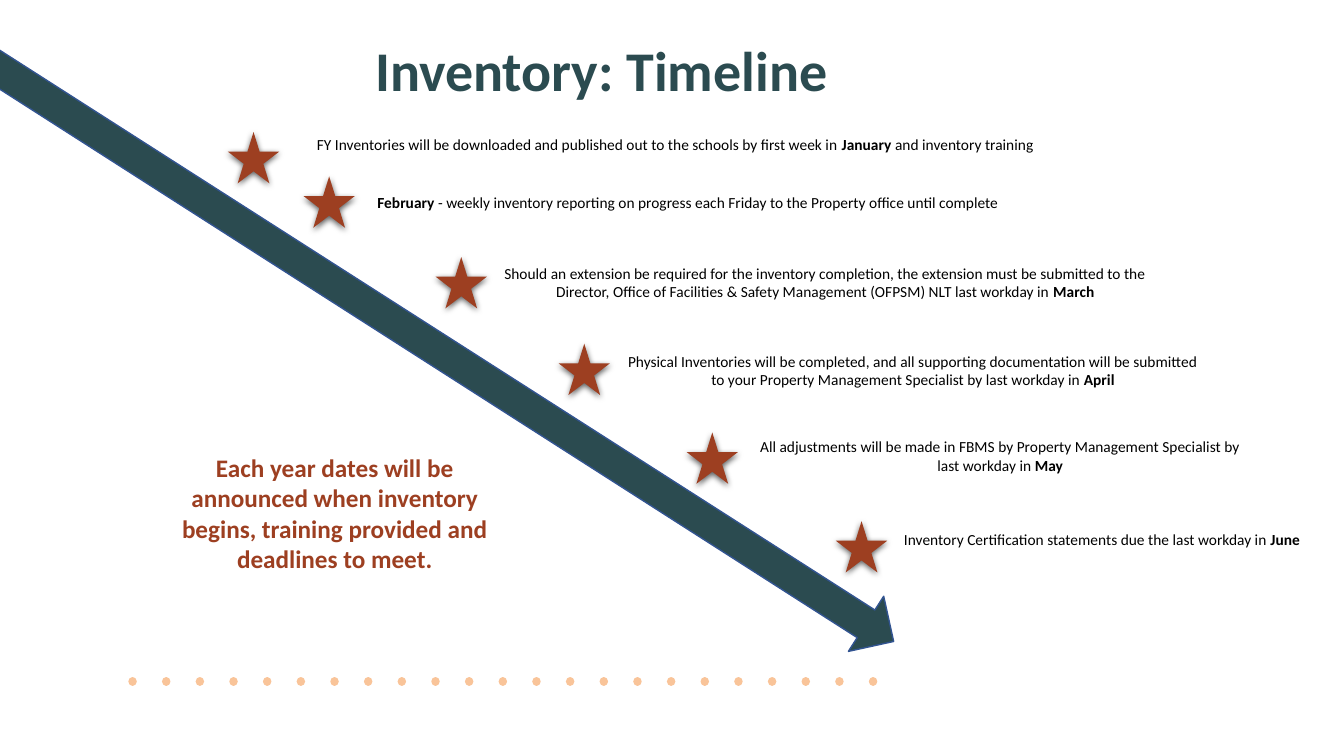
from lxml import etree
from pptx import Presentation
from pptx import util as u
from pptx.dml.color import RGBColor
from pptx.enum import dml, shapes, text
from pptx.oxml import ns

COLORS = {"teal": "2B4B50", "rust": "9D3F21", "edge": "325491",
          "peach": "F9C499", "black": "000000"}
STAR = 0.51
CENTER, LEFT = text.PP_ALIGN.CENTER, text.PP_ALIGN.LEFT

# Each milestone: star position, text box, alignment, runs as (text, bold)
MILESTONES = [
    ((2.26, 1.31), (3.01, 1.29, 7.93, 0.29), LEFT,
     [(" FY Inventories will be downloaded and published out to the schools "
       "by first week in ", False),
      ("January", True), (" and inventory training", False)]),
    ((3.01, 1.75), (3.61, 1.87, 7.33, 0.29), LEFT,
     [(" ", False), ("February", True),
      (" - weekly inventory reporting on progress each Friday to the "
       "Property office until complete", False)]),
    ((4.32, 2.55), (4.83, 2.57, 6.71, 0.47), CENTER,
     [("Should an extension be required for the inventory completion, the "
       "extension must be submitted to the Director, Office of Facilities & "
       "Safety Management (OFPSM) NLT last workday in ", False),
      ("March", True)]),
    ((5.54, 3.41), (6.05, 3.44, 6.01, 0.47), CENTER,
     [("Physical Inventories will be completed, and all supporting "
       "documentation will be submitted to your Property Management "
       "Specialist by last workday in ", False),
      ("April", True)]),
    ((6.81, 4.29), (7.32, 4.29, 5.2, 0.47), CENTER,
     [("All adjustments will be made in FBMS by Property Management "
       "Specialist by last workday in ", False),
      ("May", True)]),
    ((8.29, 5.17), (8.83, 5.21, 4.2, 0.29), CENTER,
     [("Inventory Certification statements due the last workday in ", False),
      ("June", True)]),
]


def rgb(name):
    """Return the named colour."""
    return RGBColor.from_string(COLORS[name])


def add_text(s, box, runs, size=11, color="black", align=CENTER):
    """Add a wrapped text box holding one paragraph of (text, bold) runs."""
    tf = s.shapes.add_textbox(*map(u.Inches, box)).text_frame
    tf.word_wrap = True
    p = tf.paragraphs[0]
    p.alignment = align
    for words, bold in runs:
        r = p.add_run()
        r.text = words
        r.font.name = "Calibri"
        r.font.size = u.Pt(size)
        r.font.bold = bold
        r.font.color.rgb = rgb(color)


def add_filled(s, kind, box, color):
    """Add a preset shape with a solid fill and no shadow."""
    sp = s.shapes.add_shape(kind, *map(u.Inches, box))
    sp.shadow.inherit = False
    sp.fill.solid()
    sp.fill.fore_color.rgb = rgb(color)
    return sp


def add_star(s, left, top):
    """Add a milestone star with a soft shadow below it."""
    sp = add_filled(s, shapes.MSO_SHAPE.STAR_5_POINT, (left, top, STAR, STAR), "rust")
    sp.line.fill.background()
    effects = sp._element.spPr.find(ns.qn("a:effectLst"))
    shadow = etree.SubElement(effects, ns.qn("a:outerShdw"), blurRad=str(u.Pt(4.5)),
                              dist=str(u.Pt(1.5)), dir="5400000", algn="ctr",
                              rotWithShape="0")
    tint = etree.SubElement(shadow, ns.qn("a:srgbClr"), val=COLORS["black"])
    etree.SubElement(tint, ns.qn("a:alpha"), val="63000")


def add_dotted_rule(s, left, right, y):
    """Add the row of round dots, drawn from right to left."""
    rule = s.shapes.add_connector(shapes.MSO_CONNECTOR.STRAIGHT,
                                  *map(u.Inches, (right, y, left, y)))
    rule.line.color.rgb = rgb("peach")
    rule.line.width = u.Pt(6)
    rule.line.dash_style = dml.MSO_LINE.ROUND_DOT
    ln = rule.line._get_or_add_ln()
    ln.set("cap", "rnd")
    ln.find(ns.qn("a:prstDash")).set("val", "dot")
    etree.SubElement(rule._element.spPr, ns.qn("a:effectLst"))


def add_arrow(s, box, angle):
    """Add the slanted timeline arrow."""
    sp = add_filled(s, shapes.MSO_SHAPE.RIGHT_ARROW, box, "teal")
    sp.rotation = angle
    sp.line.color.rgb = rgb("edge")
    sp.line.width = u.Pt(1)


def add_timeline_slide(prs):
    """Build the inventory timeline slide."""
    s = prs.slides.add_slide(prs.slide_layouts[6])
    add_dotted_rule(s, 1.28, 8.66, 6.76)
    add_text(s, (2.9, 0.3, 6.13, 0.77), [("Inventory: Timeline", True)],
             size=40, color="teal")
    add_arrow(s, (-1.15, 3.11, 10.87, 0.65), 32.6)
    add_text(s, (1.66, 4.44, 3.32, 1.31),
             [("Each year dates will be announced when inventory begins, "
               "training provided and deadlines to meet.", True)],
             size=18, color="rust")
    for star, box, align, runs in MILESTONES:
        add_text(s, box, runs, align=align)
        add_star(s, *star)


def main():
    """Create and save the presentation."""
    prs = Presentation()
    prs.slide_width, prs.slide_height = u.Inches(13.33), u.Inches(7.5)
    add_timeline_slide(prs)
    prs.save("out.pptx")


if __name__ == "__main__":
    main()
